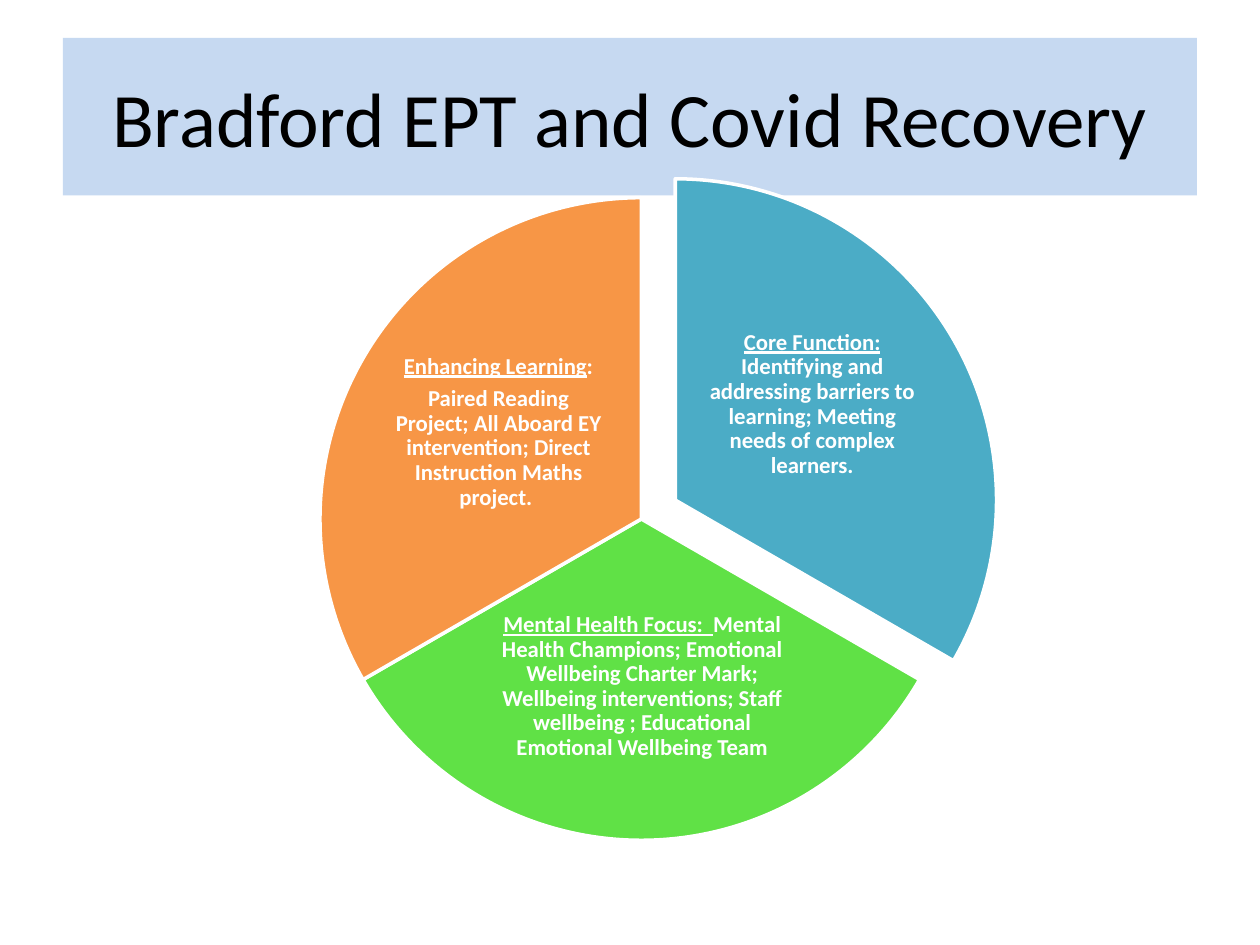
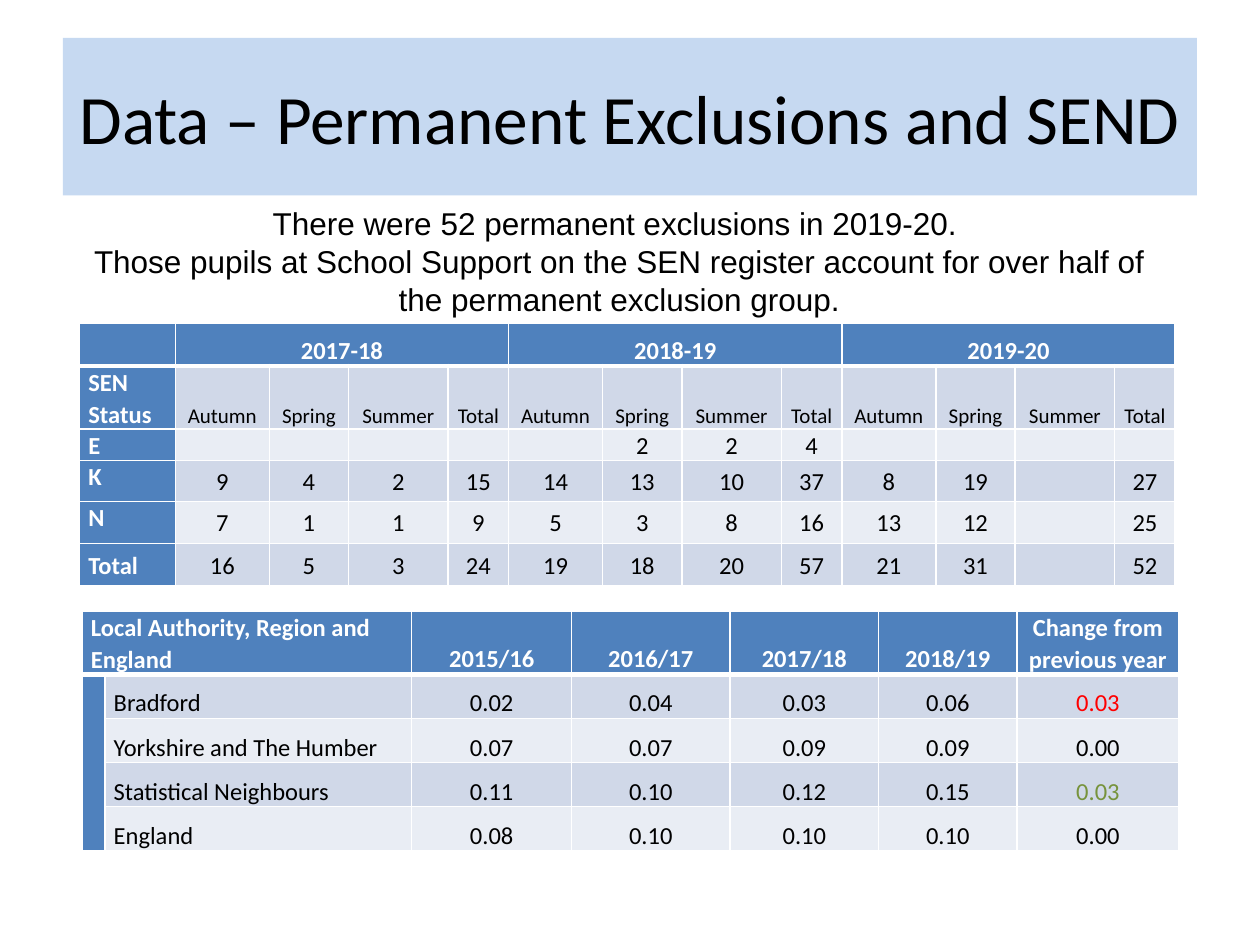
import pptx
import pptx.dml.color
import pptx.enum.shapes
import pptx.enum.text
import pptx.oxml.ns
import pptx.util
from lxml import etree

Pt = pptx.util.Pt
ALIGN = pptx.enum.text.PP_ALIGN
ANCHOR = pptx.enum.text.MSO_ANCHOR
SHAPES = pptx.enum.shapes.MSO_SHAPE
qn = pptx.oxml.ns.qn

WHITE, BLACK, RED, OLIVE = "FFFFFF", "000000", "FF0000", "77933C"
BAND, HEADER, ROW_DARK, ROW_LIGHT = "C6D9F1", "4F81BD", "D0D8E8", "E9EDF4"
TEAL, GREEN, ORANGE = "4BACC6", "60E146", "F79646"
CELL_SIDE = 5


def rgb(code):
    """Turn a hex string into a colour."""
    return pptx.dml.color.RGBColor.from_string(code)


def add_run(paragraph, text, size, color, font="Calibri", bold=False, underline=False):
    """Append one formatted run to a paragraph."""
    run = paragraph.add_run()
    run.text = text
    run.font.name = font
    run.font.size = Pt(size)
    run.font.bold = bold
    run.font.underline = underline
    run.font.color.rgb = rgb(color)


def add_paragraphs(frame, paragraphs, size, color, font="Calibri", bold=False,
                   spacing=1.0, after=0):
    """Fill a frame with centred paragraphs of (text, underline) runs."""
    frame.word_wrap = True
    for index, runs in enumerate(paragraphs):
        paragraph = frame.add_paragraph() if index else frame.paragraphs[0]
        paragraph.alignment = ALIGN.CENTER
        paragraph.line_spacing = spacing
        paragraph.space_after = Pt(after)
        for text, underline in runs:
            add_run(paragraph, text, size, color, font, bold, underline)


def add_title(slide, text, size):
    """Draw the pale blue title band."""
    band = slide.shapes.add_shape(SHAPES.RECTANGLE, Pt(36), Pt(21.6), Pt(648), Pt(90))
    band.shadow.inherit = False
    band.fill.solid()
    band.fill.fore_color.rgb = rgb(BAND)
    band.line.fill.background()
    band.text_frame.vertical_anchor = ANCHOR.MIDDLE
    add_paragraphs(band.text_frame, [[(text, False)]], size, BLACK)


def add_wedge(slide, left, top, start, end, color):
    """Draw one third of the circle between two angles in degrees."""
    wedge = slide.shapes.add_shape(SHAPES.PIE, Pt(left), Pt(top), Pt(367.2), Pt(367.2))
    wedge.shadow.inherit = False
    wedge.adjustments[0] = start * 0.6
    wedge.adjustments[1] = end * 0.6
    wedge.fill.solid()
    wedge.fill.fore_color.rgb = rgb(color)
    wedge.line.color.rgb = rgb(WHITE)
    wedge.line.width = Pt(2)


def add_wedge_text(slide, box, paragraphs):
    """Place white bold text over a wedge."""
    frame = slide.shapes.add_textbox(*map(Pt, box)).text_frame
    frame.margin_left = frame.margin_right = Pt(1.3)
    frame.margin_top = frame.margin_bottom = Pt(1.3)
    frame.vertical_anchor = ANCHOR.MIDDLE
    add_paragraphs(frame, paragraphs, 13, WHITE, bold=True, spacing=0.9, after=4.5)


def set_borders(cell, top, bottom):
    """Give a cell white borders, with its own top and bottom widths."""
    properties = cell._tc.get_or_add_tcPr()
    widths = {"a:lnL": 1, "a:lnR": 1, "a:lnT": top, "a:lnB": bottom}
    for index, (tag, width) in enumerate(widths.items()):
        line = etree.Element(qn(tag), w=str(Pt(width)))
        fill = etree.SubElement(line, qn("a:solidFill"))
        etree.SubElement(fill, qn("a:srgbClr"), val=WHITE)
        properties.insert(index, line)


def fill_cell(cell, text, fill, color, bold, size, align, anchor):
    """Set the fill, margins and text of a cell."""
    cell.fill.solid()
    cell.fill.fore_color.rgb = rgb(fill)
    cell.margin_left = cell.margin_right = Pt(CELL_SIDE)
    cell.margin_top = cell.margin_bottom = Pt(0)
    cell.vertical_anchor = anchor
    paragraph = cell.text_frame.paragraphs[0]
    paragraph.alignment = align
    paragraph.line_spacing = 1.07
    if text:
        add_run(paragraph, text, size, color, bold=bold)
    else:
        etree.SubElement(paragraph._p, qn("a:endParaRPr"), sz="1200")


def add_data_table(slide, left, top, widths, heights, rows, merges, style):
    """Draw a banded table; style(row, column) gives size, alignment, anchor, colour."""
    table = slide.shapes.add_table(len(rows), len(widths), Pt(left), Pt(top),
                                   Pt(sum(widths)), Pt(sum(heights))).table
    table.first_row = table.horz_banding = False
    for column, width in zip(table.columns, widths):
        column.width = Pt(width)
    for row, height in zip(table.rows, heights):
        row.height = Pt(height)
    for first, last in merges:
        table.cell(*first).merge(table.cell(*last))
    for r, values in enumerate(rows):
        for c, text in enumerate(values):
            heading = r == 0 or c == 0
            fill = HEADER if heading else ROW_DARK if r % 2 else ROW_LIGHT
            size, align, anchor, color = style(r, c)
            cell = table.cell(r, c)
            fill_cell(cell, text, fill, WHITE if heading else color, heading,
                      size, align, anchor)
            set_borders(cell, 3 if r == 1 else 1, 3 if r == 0 else 1)


def exclusions_style(r, c):
    """Style the cells of the exclusions by SEN status."""
    anchor = ANCHOR.BOTTOM if r < 2 else ANCHOR.MIDDLE
    if c == 0 and r in (2, 3, 4):
        anchor = ANCHOR.TOP
    size = 12 if r == 1 and c else 14
    return size, ALIGN.CENTER if c else ALIGN.LEFT, anchor, BLACK


def rates_style(r, c):
    """Style the cells of the exclusion rates by area."""
    anchor = ANCHOR.MIDDLE if r == c == 0 else ANCHOR.BOTTOM
    color = {(1, 6): RED, (3, 6): OLIVE}.get((r, c), BLACK)
    return 14, ALIGN.CENTER if c > 1 else ALIGN.LEFT, anchor, color


def build_recovery(slide):
    """Build the recovery slide with its three areas of work."""
    add_title(slide, "Bradford EPT and Covid Recovery", 44)
    left, top = 182.9, 113
    add_wedge(slide, left + 19.4, top - 10.8, 270, 30, TEAL)
    add_wedge_text(slide, (401.8, 169.9, 124.6, 122.4), [[
        ("Core Function: ", True),
        ("Identifying and addressing barriers to learning; Meeting needs of "
         "complex learners.", False)]])
    add_wedge(slide, left, top, 30, 150, GREEN)
    add_wedge_text(slide, (283.7, 344.9, 166.3, 95), [[
        ("Mental Health Focus:  ", True),
        ("Mental Health Champions; Emotional Wellbeing Charter Mark; Wellbeing "
         "interventions; Staff wellbeing ; Educational Emotional Wellbeing Team", False)]])
    add_wedge(slide, left, top, 150, 270, ORANGE)
    add_wedge_text(slide, (222.5, 185.8, 124.6, 122.4), [
        [("Enhancing Learning", True), (":", False)],
        [("Paired Reading Project; All Aboard EY intervention; Direct Instruction "
          "Maths project. ", False)]])


def build_exclusions(slide):
    """Build the data slide with its summary and two tables."""
    add_title(slide, "Data – Permanent Exclusions and SEND", 39.6)
    summary = slide.shapes.add_textbox(Pt(36), Pt(113), Pt(635.8), Pt(94.3))
    add_paragraphs(summary.text_frame, [
        [("There were 52 permanent exclusions in 2019-20. ", False)],
        [("Those pupils at School Support on the SEN register account for over "
          "half of the permanent exclusion group.", False)]], 18, BLACK, "Arial")

    years = ["2017-18", "2018-19", "2019-20"]
    terms = ["Autumn", "Spring", "Summer", "Total"]
    exclusions = [
        [""] + [text for year in years for text in (year, "", "", "")],
        ["SEN Status"] + terms * len(years),
        ["E", "", "", "", "", "", "2", "2", "4", "", "", "", ""],
        ["K", "9", "4", "2", "15", "14", "13", "10", "37", "8", "19", "", "27"],
        ["N", "7", "1", "1", "9", "5", "3", "8", "16", "13", "12", "", "25"],
        ["Total", "16", "5", "3", "24", "19", "18", "20", "57", "21", "31", "", "52"],
    ]
    add_data_table(slide, 45.5, 184.8, [54.7] + [53.7, 45.3, 56.9, 34.6] * len(years),
                   [24.3, 24.3, 16.7, 23.4, 24.2, 24.2], exclusions,
                   [((0, c), (0, c + 3)) for c in (1, 5, 9)], exclusions_style)

    rates = [
        ["Local Authority, Region and England", "", "2015/16", "2016/17", "2017/18",
         "2018/19", "Change from previous year"],
        ["", "Bradford", "0.02", "0.04", "0.03", "0.06", "0.03"],
        ["", "Yorkshire and The Humber", "0.07", "0.07", "0.09", "0.09", "0.00"],
        ["", "Statistical Neighbours", "0.11", "0.10", "0.12", "0.15", "0.03"],
        ["", "England", "0.08", "0.10", "0.10", "0.10", "0.00"],
    ]
    add_data_table(slide, 47, 349.4, [13, 175.3, 91.4, 90.5, 85, 79, 92.6],
                   [30.2] + [25.2] * 4, rates,
                   [((0, 0), (0, 1)), ((1, 0), (4, 0))], rates_style)


def main():
    """Build both slides and save them."""
    deck = pptx.Presentation()
    deck.slide_width, deck.slide_height = Pt(720), Pt(540)
    for build in (build_recovery, build_exclusions):
        build(deck.slides.add_slide(deck.slide_layouts[6]))
    deck.save("out.pptx")


if __name__ == "__main__":
    main()
